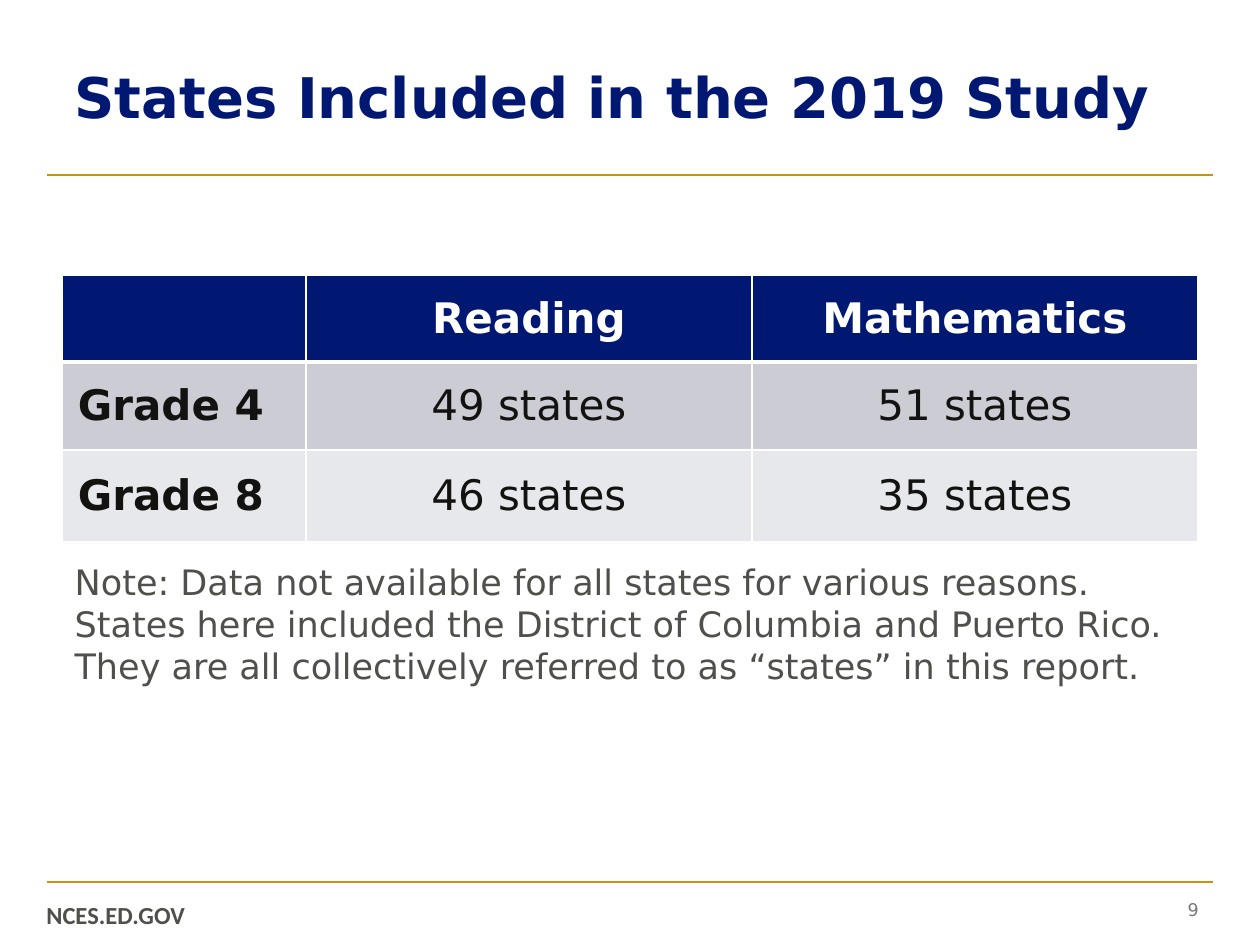
import pptx
import pptx.dml.color
import pptx.enum.shapes
import pptx.enum.text
import pptx.oxml
import pptx.oxml.ns
import pptx.util
from lxml import etree

PX = 914400 / 126
NAVY, GOLD, GRAY, WHITE, INK = "001871", "C69214", "4F4F4B", "FFFFFF", "121211"
ALIGN = pptx.enum.text.PP_ALIGN
MID = pptx.enum.text.MSO_ANCHOR.MIDDLE


def emu(*nums):
    return [pptx.util.Emu(round(n * PX)) for n in nums]


def style(para, size, hue, bold=False, align=ALIGN.LEFT, face="DejaVu Sans"):
    font = para.font
    font.name, font.size, font.bold = face, pptx.util.Pt(size), bold
    font.color.rgb = pptx.dml.color.RGBColor.from_string(hue)
    para.alignment = align


prs = pptx.Presentation()
prs.slide_width, prs.slide_height = emu(1260, 945)
slide = prs.slides.add_slide(prs.slide_layouts[1])
shapes = slide.shapes

# Rules above and below the content
for y in (175, 882):
    rule = shapes.add_connector(
        pptx.enum.shapes.MSO_CONNECTOR.STRAIGHT, *emu(47, y, 1213, y))
    rule.line.color.rgb = pptx.dml.color.RGBColor.from_string(GOLD)
    rule.line.width = pptx.util.Pt(1.5)
    etree.SubElement(rule._element.spPr, pptx.oxml.ns.qn("a:effectLst"))

# Title and note
title, note = shapes.title, slide.placeholders[1]
note_text = (
    "Note: Data not available for all states for various reasons. "
    "States here included the District of Columbia and Puerto Rico. "
    "They are all collectively referred to as “states” in this report.")
for holder, box, text, size, hue, bold in (
        (title, (62, 38, 1135, 117), "States Included in the 2019 Study",
         32, NAVY, True),
        (note, (62, 554, 1135, 188), note_text, 20, GRAY, False)):
    holder.left, holder.top, holder.width, holder.height = emu(*box)
    frame = holder.text_frame
    frame.text = text
    frame.auto_size = pptx.enum.text.MSO_AUTO_SIZE.NONE
    style(frame.paragraphs[0], size, hue, bold)
title.text_frame.vertical_anchor = MID
props = note.text_frame.paragraphs[0]._p.get_or_add_pPr()
props.set("marL", "0")
props.set("indent", "0")
etree.SubElement(props, pptx.oxml.ns.qn("a:buNone"))

# Table of states by grade and subject
rows = (("", "Reading", "Mathematics"),
        ("Grade 4", "49 states", "51 states"),
        ("Grade 8", "46 states", "35 states"))
fills = (NAVY, "CCCCD5", "E7E8EB")
table = shapes.add_table(3, 3, *emu(62, 275, 1136, 267)).table
for col, width in zip(table.columns, emu(244, 446, 446)):
    col.width = width
for row, height in zip(table.rows, emu(87, 88, 92)):
    row.height = height
for r, row in enumerate(rows):
    for c, text in enumerate(row):
        cell = table.cell(r, c)
        cell.text = text
        cell.vertical_anchor = MID
        cell.margin_left, cell.margin_right = emu(16, 16)
        cell.margin_top, cell.margin_bottom = emu(8, 8)
        style(cell.text_frame.paragraphs[0], 24, INK if r else WHITE,
              r == 0 or c == 0, ALIGN.CENTER if c else ALIGN.LEFT)
        for side in "LRTB":
            thick = (r, side) in ((0, "B"), (1, "T"))
            cell._tc.get_or_add_tcPr().append(pptx.oxml.parse_xml(
                f'<a:ln{side} {pptx.oxml.ns.nsdecls("a")} '
                f'w="{pptx.util.Pt(3 if thick else 1)}"><a:solidFill>'
                f'<a:srgbClr val="{WHITE}"/></a:solidFill></a:ln{side}>'))
        cell.fill.solid()
        cell.fill.fore_color.rgb = pptx.dml.color.RGBColor.from_string(fills[r])

# Footer: site address and page number
for box, text, size, hue, bold, align, face in (
        ((34, 893, 171, 43), "NCES.ED.GOV", 14, GRAY, True, ALIGN.LEFT, "Calibri"),
        ((917, 885, 294, 50), "9", 10, "777877", False, ALIGN.RIGHT, "DejaVu Sans")):
    frame = shapes.add_textbox(*emu(*box)).text_frame
    frame.word_wrap = True
    frame.vertical_anchor = MID
    frame.text = text
    style(frame.paragraphs[0], size, hue, bold, align, face)

prs.save("out.pptx")
